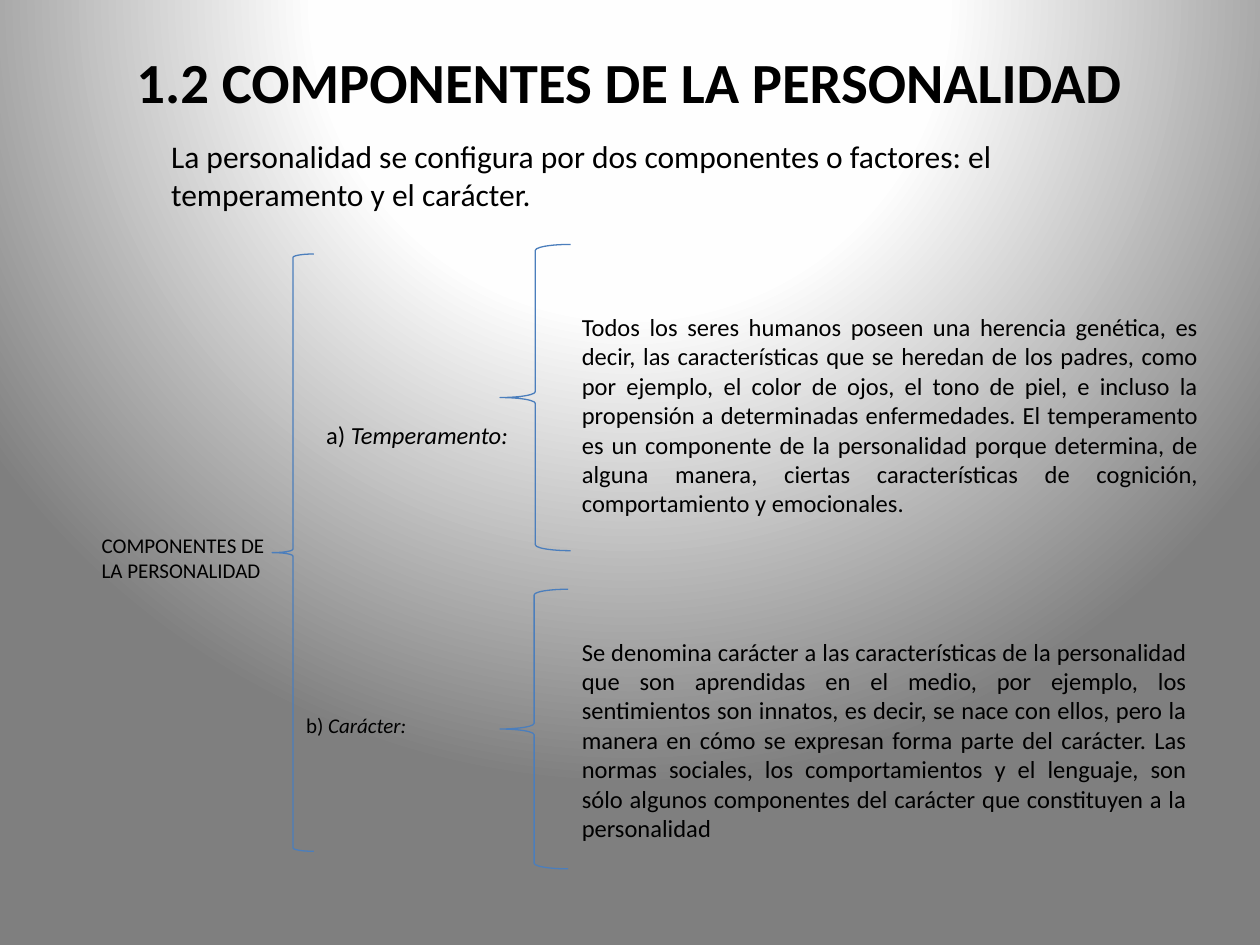
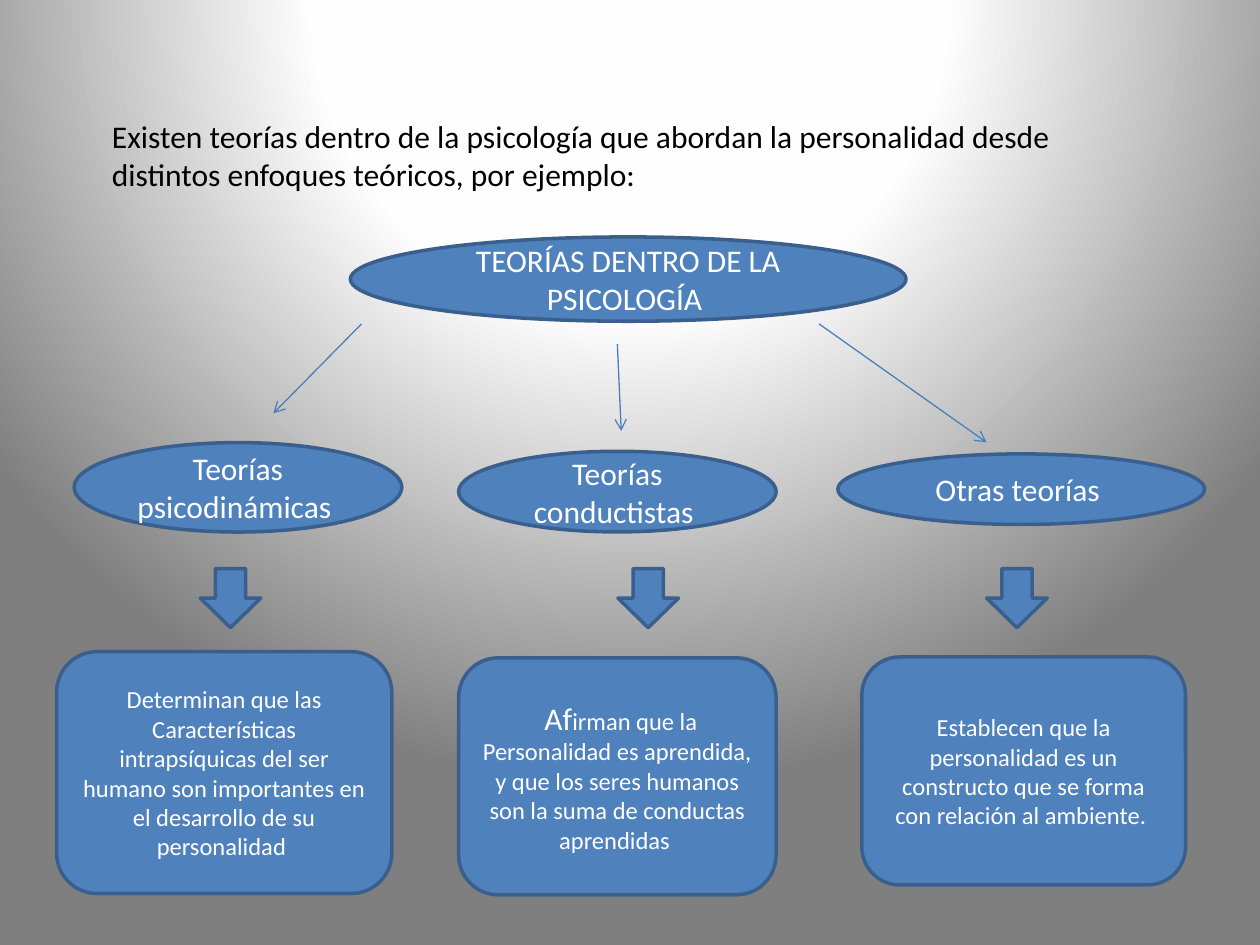
from lxml import etree
from pptx import Presentation
from pptx import util as u
from pptx.dml.color import RGBColor
from pptx.enum import shapes, text
from pptx.oxml import parse_xml
from pptx.oxml.ns import nsdecls, qn

FONT = "Calibri"
BLACK, WHITE = "000000", "FFFFFF"
FILL, EDGE, THIN_LINE = "4F81BD", "3A5F8C", "4B7EBC"
BACKGROUND_STOPS = [(0, "FFFFFF"), (40, "FEFEFE"), (100, "7F7F7F")]
SHAPE = shapes.MSO_SHAPE
ALIGN = text.PP_ALIGN


def color(value):
    return RGBColor.from_string(value)


def within(box, left, top, width, height):
    """Turn a place measured from the corner of box into a place on the slide."""
    return box[0] + left, box[1] + top, width, height


def points(*values):
    return [u.Pt(value) for value in values]


def add_page(deck):
    page = deck.slides.add_slide(deck.slide_layouts[6])
    page.background.fill.solid()
    stops = "".join(
        f'<a:gs pos="{position * 1000}"><a:srgbClr val="{value}"/></a:gs>'
        for position, value in BACKGROUND_STOPS)
    gradient = parse_xml(
        f'<a:gradFill {nsdecls("a")} rotWithShape="1"><a:gsLst>{stops}</a:gsLst>'
        '<a:path path="circle"><a:fillToRect l="50000" t="-80000" r="50000" b="180000"/>'
        '</a:path></a:gradFill>')
    solid = page.element.find(".//" + qn("p:bgPr")).find(qn("a:solidFill"))
    solid.getparent().replace(solid, gradient)
    return page


def write(shape, paragraphs, size, value=BLACK, align=ALIGN.LEFT, bold=False):
    """Fill shape with paragraphs; each is a list of (text, changes) spans."""
    frame = shape.text_frame
    frame.word_wrap = True
    for index, spans in enumerate(paragraphs):
        para = frame.add_paragraph() if index else frame.paragraphs[0]
        para.alignment = align
        for words, changes in spans:
            span = para.add_run()
            span.text = words
            span.font.name = FONT
            span.font.size = u.Pt(changes.get("size", size))
            span.font.italic = changes.get("italic", False)
            span.font.bold = bold
            span.font.color.rgb = color(value)


def plain(*lines):
    return [[(line, {})] for line in lines]


def add_text(page, box, paragraphs, size, **style):
    shape = page.shapes.add_textbox(*points(*box))
    write(shape, paragraphs, size, **style)
    return shape


def add_title(page, box, words):
    title = add_text(page, box, plain(words), 32.4, align=ALIGN.CENTER, bold=True)
    title.text_frame.vertical_anchor = text.MSO_ANCHOR.MIDDLE


def add_brace(page, box):
    brace = page.shapes.add_shape(SHAPE.LEFT_BRACE, *points(*box))
    brace.shadow.inherit = False
    brace.fill.background()
    brace.line.color.rgb = color(THIN_LINE)
    brace.line.width = u.Pt(0.75)


def add_block(page, kind, box, paragraphs=(), size=18):
    """Draw a filled blue shape with centred white text."""
    block = page.shapes.add_shape(kind, *points(*box))
    block.shadow.inherit = False
    block.fill.solid()
    block.fill.fore_color.rgb = color(FILL)
    block.line.color.rgb = color(EDGE)
    block.line.width = u.Pt(2)
    block.text_frame.vertical_anchor = text.MSO_ANCHOR.MIDDLE
    write(block, paragraphs, size, WHITE, ALIGN.CENTER)


def add_arrow(page, start, end):
    arrow = page.shapes.add_connector(
        shapes.MSO_CONNECTOR.STRAIGHT, *points(*start, *end))
    arrow.line.color.rgb = color(THIN_LINE)
    arrow.line.width = u.Pt(0.75)
    line = arrow.line._get_or_add_ln()
    etree.SubElement(line, qn("a:tailEnd"), type="arrow")
    etree.SubElement(arrow._element.spPr, qn("a:effectLst"))


def add_branch(page, box, label, label_place, label_size, brace_width, body, body_place):
    """Draw a labelled brace and the explanation to its right."""
    letter, name = label
    spans = [(letter, {}), (name, {"italic": True})]
    add_text(page, within(box, *label_place), [spans], label_size)
    add_brace(page, within(box, 118, 0, brace_width, box[3]))
    add_text(page, within(box, *body_place), plain(body), 14, align=ALIGN.JUSTIFY)


def add_components(page, box):
    add_text(page, within(box, 0, 161, 116.6, 36),
             plain("COMPONENTES DE", "LA PERSONALIDAD"), 12)
    add_brace(page, within(box, 104.5, 5.5, 23.8, 341.3))
    add_branch(
        page, within(box, 116.8, 0, 525, 175),
        ("a) ", "Temperamento:"), (11.5, 97, 231.8, 24), 14, 40.3,
        "Todos los seres humanos poseen una herencia genética, es decir, las "
        "características que se heredan de los padres, como por ejemplo, el color de "
        "ojos, el tono de piel, e incluso la propensión a determinadas enfermedades. "
        "El temperamento es un componente de la personalidad porque determina, de "
        "alguna manera, ciertas características de cognición, comportamiento y "
        "emocionales. ", (157.6, 35, 366.5, 126))
    add_branch(
        page, within(box, 116.8, 197, 525, 159.8),
        ("b) ", "Carácter:"), (0, 67, 75.6, 21.6), 12, 38.9,
        "Se denomina carácter a las características de la personalidad que son "
        "aprendidas en el medio, por ejemplo, los sentimientos son innatos, es decir, "
        "se nace con ellos, pero la manera en cómo se expresan forma parte del "
        "carácter. Las normas sociales, los comportamientos y el lenguaje, son sólo "
        "algunos componentes del carácter que constituyen a la personalidad ",
        (157.6, 23.5, 360, 126))


def add_theory(page, box, name, name_place, arrow_left, card, card_place):
    """Stack a theory's name, a down arrow and the card that explains it."""
    add_block(page, SHAPE.OVAL, within(box, *name_place), plain(name))
    add_block(page, SHAPE.ROUNDED_RECTANGLE, within(box, *card_place), [card], 14)
    add_block(page, SHAPE.DOWN_ARROW, within(box, arrow_left, 72.5, 34.6, 33.8))


def add_theories(page, box):
    add_block(page, SHAPE.OVAL, within(box, 167.8, 0, 317.5, 48.2),
              plain("TEORÍAS DENTRO DE LA PSICOLOGÍA "))
    add_theory(
        page, within(box, 0, 117, 197, 259),
        "Teorías psicodinámicas ", (10, 0.5, 187.2, 51.1), 82,
        [("Determinan que las Características intrapsíquicas del ser humano son "
          "importantes en el desarrollo de su personalidad ", {})],
        (0, 120, 191.5, 138.2))
    add_theory(
        page, within(box, 229.7, 117, 181.4, 259),
        "Teorías conductistas ", (0, 5.5, 181.4, 46.1), 91,
        [(" Af", {"size": 18}),
         ("irman que la Personalidad es aprendida, y que los seres humanos son la "
          "suma de conductas aprendidas ", {})],
        (0, 123.5, 181.4, 135.4))
    add_theory(
        page, within(box, 446.4, 117, 209.5, 259),
        "Otras teorías ", (0, 7, 209.5, 40.3), 85,
        [("Establecen que la personalidad es un constructo que se forma con relación "
          "al ambiente. ", {})],
        (13.7, 123, 185, 130.3))
    left, top = box[:2]
    for x1, y1, x2, y2 in [(174.2, 49.7, 123.8, 100.8),
                           (320.4, 61.2, 322.6, 110.9),
                           (435.6, 49.7, 531.4, 117.4)]:
        add_arrow(page, (left + x1, top + y1), (left + x2, top + y2))


def main():
    deck = Presentation()
    deck.slide_width, deck.slide_height = points(720, 540)

    page = add_page(deck)
    add_title(page, (42.5, 18.5, 641.5, 55.5), "1.2 COMPONENTES DE LA PERSONALIDAD ")
    add_text(page, (90.7, 75, 592.6, 51), plain(
        "La personalidad se configura por dos componentes o factores: el "
        "temperamento y el carácter."), 18)
    add_components(page, (51, 139.7, 642, 357))

    page = add_page(deck)
    add_text(page, (56.9, 63.4, 592.6, 51), plain(
        "Existen teorías dentro de la psicología que abordan la personalidad desde "
        "distintos enfoques teóricos, por ejemplo:"), 18)
    add_theories(page, (32.4, 135.4, 656, 376))

    deck.save("out.pptx")


if __name__ == "__main__":
    main()
